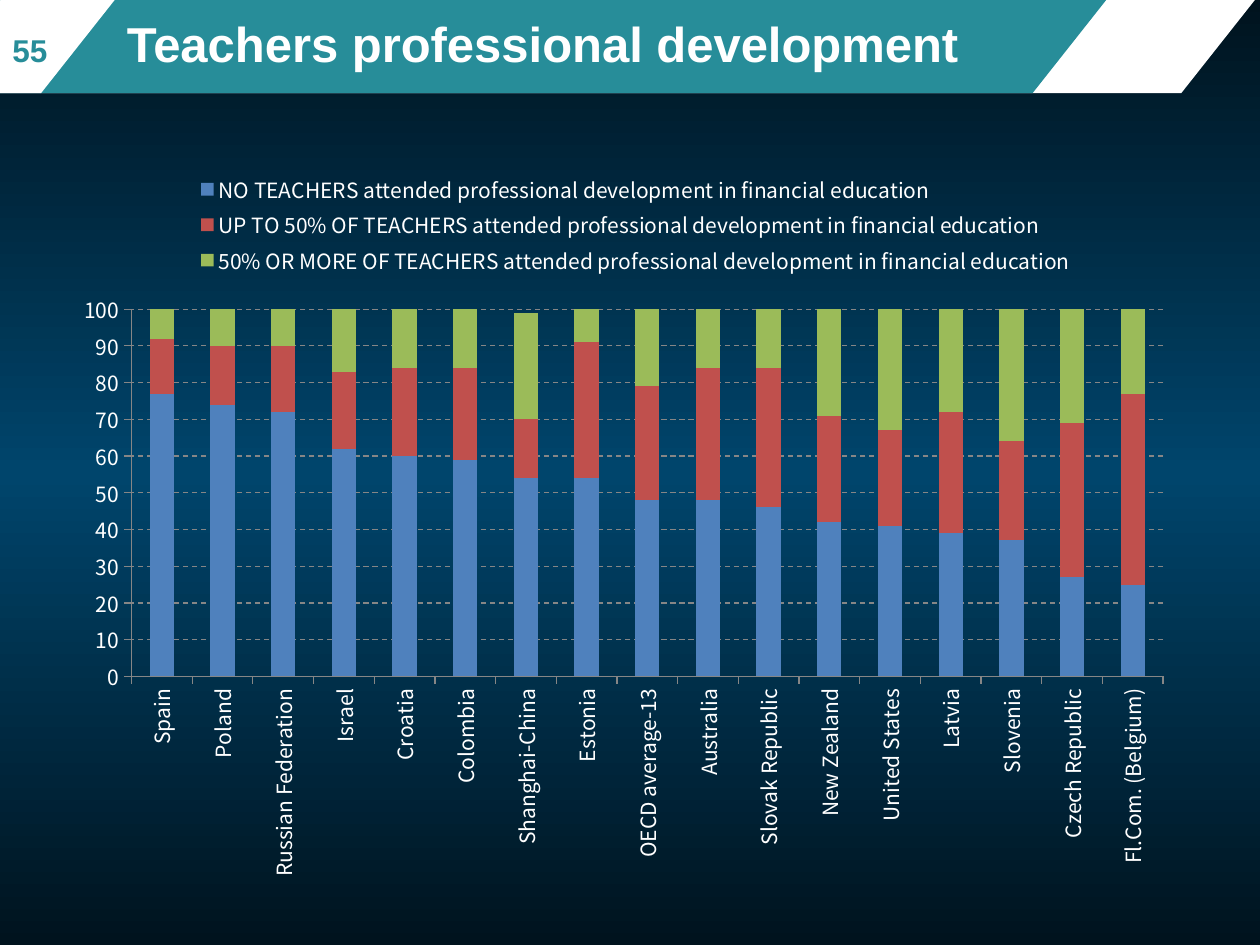
from copy import deepcopy
from dataclasses import dataclass

from lxml.etree import SubElement
from pptx import Presentation
from pptx.chart.data import CategoryChartData
from pptx.dml.color import RGBColor
from pptx.enum.chart import XL_CHART_TYPE as ChartType
from pptx.enum.chart import XL_LEGEND_POSITION as LegendPosition
from pptx.enum.chart import XL_TICK_MARK as TickMark
from pptx.enum.dml import MSO_LINE
from pptx.enum.shapes import MSO_SHAPE as Shape
from pptx.enum.text import MSO_ANCHOR as Anchor
from pptx.oxml.ns import qn
from pptx.util import Inches, Pt


@dataclass(frozen=True)
class Theme:
    """Colours, fonts and type sizes of the slide."""
    white: str = "FFFFFF"
    teal: str = "278D99"
    grid: str = "868686"
    night: str = "00131E"
    ocean: str = "00456C"
    series: tuple = ("4F81BD", "C0504D", "9BBB59")
    heading_font: str = "Arial"
    chart_font: str = "Noto Sans CJK KR"
    title_size: int = 28
    number_size: int = 18
    chart_size: int = 12


THEME = Theme()
SUBJECT = "attended professional development in financial education"
GROUPS = ("NO TEACHERS", "UP TO 50% OF TEACHERS", "50% OR MORE OF TEACHERS")
SHARES = {
    "Spain": (77, 15, 8),
    "Poland": (74, 16, 10),
    "Russian Federation": (72, 18, 10),
    "Israel": (62, 21, 17),
    "Croatia": (60, 24, 16),
    "Colombia": (59, 25, 16),
    "Shanghai-China": (54, 16, 29),
    "Estonia": (54, 37, 10),
    "OECD average-13": (48, 31, 21),
    "Australia": (48, 36, 16),
    "Slovak Republic": (46, 38, 16),
    "New Zealand": (42, 29, 29),
    "United States": (41, 26, 33),
    "Latvia": (39, 33, 28),
    "Slovenia": (37, 27, 36),
    "Czech Republic": (27, 42, 31),
    "Fl.Com. (Belgium)": (25, 52, 23),
}


def rgb(colour):
    """Return the colour object for a hex string."""
    return RGBColor.from_string(colour)


def paint_background(slide):
    """Fill the slide with a vertical dark-light-dark gradient."""
    fill = slide.background.fill
    fill.gradient()
    fill.gradient_angle = 270
    last = slide.background._cSld.findall(".//" + qn("a:gs"))[-1]
    last.addnext(deepcopy(last))
    colours = (THEME.night, THEME.ocean, THEME.night)
    for index, (stop, colour) in enumerate(zip(fill.gradient_stops, colours)):
        stop.position = index / 2
        stop.color.rgb = rgb(colour)


def add_label(slide, box, text, size, colour, anchor):
    """Add one bold line of heading text in a box."""
    frame = slide.shapes.add_textbox(*map(Inches, box)).text_frame
    frame.word_wrap = True
    frame.vertical_anchor = anchor
    run = frame.paragraphs[0].add_run()
    run.text = text
    run.font.name = THEME.heading_font
    run.font.size = Pt(size)
    run.font.bold = True
    run.font.color.rgb = rgb(colour)


def add_header(slide, box, title, number):
    """Add the slanted bands, the title and the slide number."""
    left, top, width, height = box
    bands = ((-0.2, 10.16, THEME.white), (-0.59, 9.37, THEME.teal), (-0.58, 1.49, THEME.white))
    for offset, band_width, colour in bands:
        band = slide.shapes.add_shape(
            Shape.PARALLELOGRAM, *map(Inches, (left + offset, top, band_width, height)))
        band.adjustments[0] = 0.79
        band.shadow.inherit = False
        band.fill.solid()
        band.fill.fore_color.rgb = rgb(colour)
        band.line.fill.background()
    add_label(slide, (left + 0.91, top, width - 2.83, height - 0.06), title,
              THEME.title_size, THEME.white, Anchor.MIDDLE)
    add_label(slide, (left, top + 0.2, 0.59, 0.4), number,
              THEME.number_size, THEME.teal, Anchor.TOP)


def set_layout(element, successors, box, inner=False):
    """Place a chart part at fractions of the chart area."""
    for old in element.findall(qn("c:layout")):
        element.remove(old)
    layout = SubElement(element, qn("c:layout"))
    manual = SubElement(layout, qn("c:manualLayout"))
    settings = [("layoutTarget", "inner")] if inner else []
    settings += [("xMode", "edge"), ("yMode", "edge"), *zip("xywh", box)]
    for name, value in settings:
        SubElement(manual, qn("c:" + name)).set("val", str(value))
    following = [child for child in element if child.tag in map(qn, successors)]
    if following:
        following[0].addprevious(layout)


def style_axes(chart):
    """Format both axes, the dashed gridlines and the upright labels."""
    for axis in (chart.category_axis, chart.value_axis):
        axis.major_tick_mark = TickMark.OUTSIDE
        axis.minor_tick_mark = TickMark.NONE
        axis.format.line.color.rgb = rgb(THEME.grid)
        axis.format.line.width = Pt(0.75)
    labels = chart.category_axis.tick_labels
    labels.font.size = Pt(THEME.chart_size)
    labels.font.color.rgb = rgb(THEME.white)
    labels.font.name = THEME.chart_font
    body = chart.category_axis._element.find(qn("c:txPr")).find(qn("a:bodyPr"))
    body.set("rot", "-5400000")
    body.set("vert", "horz")
    axis = chart.value_axis
    axis.minimum_scale, axis.maximum_scale, axis.major_unit = 0, 100, 10
    axis.tick_labels.number_format = "0"
    axis.tick_labels.number_format_is_linked = False
    axis.has_major_gridlines = True
    line = axis.major_gridlines.format.line
    line.color.rgb = rgb(THEME.grid)
    line.width = Pt(0.75)
    line.dash_style = MSO_LINE.DASH


def add_share_chart(slide, box):
    """Add the stacked columns of teacher shares by country."""
    data = CategoryChartData(number_format="0")
    data.categories = list(SHARES)
    for group, values in zip(GROUPS, zip(*SHARES.values())):
        data.add_series(f"{group} {SUBJECT}", values)
    chart = slide.shapes.add_chart(
        ChartType.COLUMN_STACKED, *map(Inches, box), data).chart
    chart.has_title = False
    chart.font.name = THEME.chart_font
    chart.font.size = Pt(THEME.chart_size)
    chart.font.color.rgb = rgb(THEME.white)
    plot = chart.plots[0]
    plot.gap_width, plot.overlap = 150, 100
    plot.vary_by_categories = False
    for series, colour in zip(plot.series, THEME.series):
        series.format.fill.solid()
        series.format.fill.fore_color.rgb = rgb(colour)
    style_axes(chart)
    chart.has_legend = True
    chart.legend.position = LegendPosition.TOP
    chart.legend.include_in_layout = False
    set_layout(chart.legend._element, ("c:overlay", "c:spPr", "c:txPr"), (0.11, 0.02, 0.8, 0.15))
    set_layout(chart._chartSpace.chart.plotArea, ("c:barChart",), (0.06, 0.21, 0.92, 0.5), inner=True)


def main():
    """Build the slide and save it."""
    presentation = Presentation()
    presentation.slide_width, presentation.slide_height = Inches(10), Inches(7.5)
    slide = presentation.slides.add_slide(presentation.slide_layouts[6])
    paint_background(slide)
    add_header(slide, (0, 0, 10, 0.74), "Teachers professional development", "55")
    add_share_chart(slide, (0.51, 1.23, 8.9, 5.83))
    presentation.save("out.pptx")


if __name__ == "__main__":
    main()
